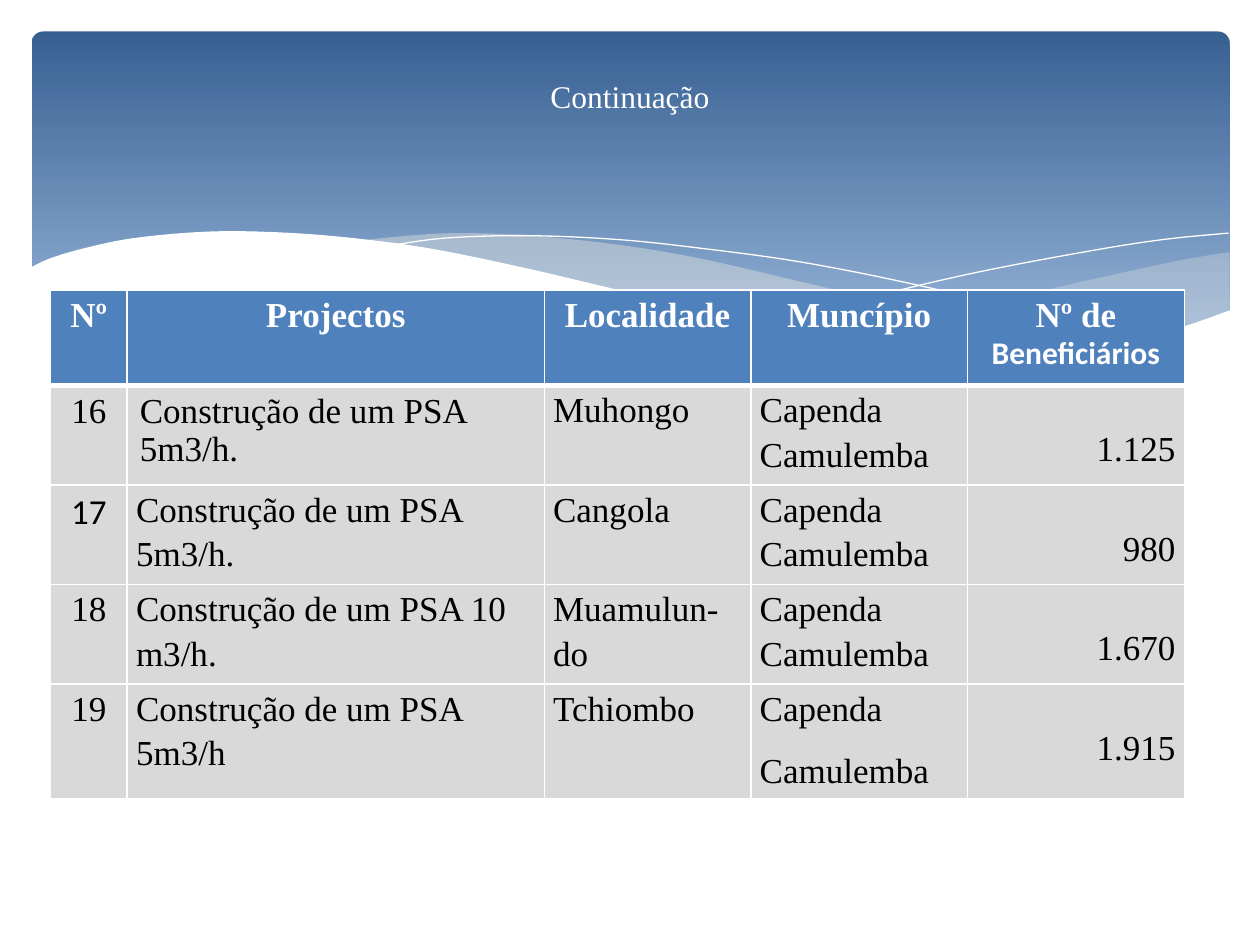
from dataclasses import dataclass
from typing import Optional

from lxml import etree
from pptx import Presentation
from pptx.dml.color import RGBColor
from pptx.enum.shapes import MSO_SHAPE
from pptx.enum.text import MSO_ANCHOR, PP_ALIGN
from pptx.oxml.ns import qn
from pptx.util import Inches, Pt

LEFT, CENTER, RIGHT, JUSTIFY = PP_ALIGN.LEFT, PP_ALIGN.CENTER, PP_ALIGN.RIGHT, PP_ALIGN.JUSTIFY
TOP = MSO_ANCHOR.TOP
ROUNDED = MSO_SHAPE.ROUNDED_RECTANGLE
SERIF, SANS = "Times New Roman", "Calibri"
WHITE, BLACK, BLUE, GREY, CREAM = "FFFFFF", "000000", "4F81BD", "D9D9D9", "EEECE1"
DEFAULT_MARGINS = (0.1, 0.05, 0.1, 0.05)
TIGHT_MARGINS = (0.07, 0, 0.07, 0)
VALUE_MARGINS = (0.07, 0.31, 0.07, 0)  # pushes the number down to the second line
Points = list[tuple[float, float]]


@dataclass
class Run:
    text: str
    font: str = SERIF
    size: float = 20
    color: str = BLACK
    bold: bool = False


@dataclass
class Cell:
    paragraphs: list[list[Run]]
    align: PP_ALIGN
    fill: str = GREY
    margins: tuple[float, ...] = TIGHT_MARGINS
    spacing: Optional[float] = 1.15
    after: float = 0


@dataclass
class Wave:
    edges: list[Points]
    fill: Optional[str] = None
    opacity: int = 100


WAVES = [
    Wave([[(9.76, 2), (9.35, 2.07), (8.61, 2.23), (7.79, 2.42), (7.06, 2.57), (6.61, 2.65)],
          [(6.61, 2.65), (7.05, 2.71), (7.57, 2.76), (8.14, 2.78), (8.63, 2.75),
           (9.13, 2.67), (9.49, 2.57), (9.76, 2.47)]], CREAM, 29),
    Wave([[(8.93, 2.73), (8.07, 2.6), (7.06, 2.4), (6.29, 2.22), (5.55, 2.05), (4.89, 1.94),
           (4.2, 1.87), (3.61, 1.85), (3.13, 1.88), (2.86, 1.91)],
          [(2.86, 1.91), (3.62, 2.03), (4.49, 2.22), (5.3, 2.4), (6.01, 2.55), (6.65, 2.66),
           (7.36, 2.75), (8.07, 2.78), (8.57, 2.77), (8.93, 2.73)]], CREAM, 40),
    Wave([[(3.09, 1.95), (3.53, 1.89), (4.16, 1.87), (4.89, 1.9), (5.56, 1.97), (6.36, 2.08),
           (7.27, 2.26), (8.31, 2.51), (9.07, 2.72)]]),
    Wave([[(6.13, 2.57), (6.95, 2.35), (7.76, 2.16), (8.66, 1.99), (9.24, 1.9), (9.75, 1.85)]]),
    Wave([[(9.77, 2.46), (9.3, 2.62), (8.75, 2.73), (8.09, 2.77), (7.44, 2.74), (6.68, 2.65),
           (5.79, 2.5), (5.03, 2.33), (4.18, 2.13), (3.4, 1.97), (2.71, 1.88), (2.11, 1.84),
           (1.61, 1.84), (1.06, 1.89), (0.67, 1.97), (0.4, 2.05), (0.23, 2.13)],
          [(0.23, 3.29), (9.77, 3.29)]], WHITE),
]

COLUMNS = [0.61, 3.31, 1.64, 1.72, 1.72]
ROWS = [0.76, 0.79, 0.79, 0.79, 0.91]


def rgb(value: str) -> RGBColor:
    return RGBColor.from_string(value)


def smooth(knots: Points, steps: int = 6) -> Points:
    """Sample a Catmull-Rom curve through the knots."""
    if len(knots) < 3:
        return knots
    padded = [knots[0], *knots, knots[-1]]
    points = [knots[0]]
    for a, b, c, d in zip(padded, padded[1:], padded[2:], padded[3:]):
        for i in range(1, steps + 1):
            t = i / steps
            points.append(tuple(
                (2 * q + (r - p) * t + (2 * p - 5 * q + 4 * r - s) * t ** 2
                 + (3 * q - p - 3 * r + s) * t ** 3) / 2
                for p, q, r, s in zip(a, b, c, d)))
    return points


def add_wave(shapes, wave: Wave) -> None:
    points = [(Inches(x), Inches(y)) for edge in wave.edges for x, y in smooth(edge)]
    builder = shapes.build_freeform(*points[0])
    builder.add_line_segments(points[1:], close=wave.fill is not None)
    sp = builder.convert_to_shape()
    sp.shadow.inherit = False
    if wave.fill is None:
        sp.fill.background()
        sp.line.color.rgb = rgb(WHITE)
        sp.line.width = Pt(0)
        return
    sp.line.fill.background()
    sp.fill.solid()
    sp.fill.fore_color.rgb = rgb(wave.fill)
    if wave.opacity < 100:
        color = sp.fill._xPr.find(qn("a:solidFill"))[0]
        etree.SubElement(color, qn("a:alpha"), val=str(wave.opacity * 1000))


def add_banner(shapes) -> None:
    sp = shapes.add_shape(ROUNDED, Inches(0.25), Inches(0.25), Inches(9.51), Inches(2.7))
    sp.adjustments[0] = 0.034
    sp.shadow.inherit = False
    sp.line.fill.background()
    sp.fill.gradient()
    sp.fill.gradient_angle = 270
    for stop, (position, color) in zip(sp.fill.gradient_stops, [(0, "376092"), (0.9, "95B3D7")]):
        stop.position = position
        stop.color.rgb = rgb(color)


def add_run(p, run: Run) -> None:
    r = p.add_run()
    r.text = run.text
    formats = {"name": run.font, "size": Pt(run.size), "bold": run.bold}
    for name, value in formats.items():
        setattr(r.font, name, value)
    r.font.color.rgb = rgb(run.color)


def add_title(shapes, run: Run) -> None:
    tf = shapes.add_textbox(Inches(0.5), Inches(0.56), Inches(9), Inches(0.65)).text_frame
    tf.word_wrap = True
    tf.vertical_anchor = TOP
    p = tf.paragraphs[0]
    p.alignment = CENTER
    add_run(p, run)


def set_borders(cell, widths: dict[str, float]) -> None:
    tc_pr = cell._tc.get_or_add_tcPr()
    for i, (side, width) in enumerate(widths.items()):
        ln = etree.Element(qn(f"a:ln{side}"), w=str(Pt(width)))
        fill = etree.SubElement(ln, qn("a:solidFill"))
        etree.SubElement(fill, qn("a:srgbClr"), val=WHITE)
        tc_pr.insert(i, ln)


def fill_cell(cell, content: Cell) -> None:
    cell.fill.solid()
    cell.fill.fore_color.rgb = rgb(content.fill)
    for side, margin in zip(("left", "top", "right", "bottom"), content.margins):
        setattr(cell, f"margin_{side}", Inches(margin))
    tf = cell.text_frame
    for i, runs in enumerate(content.paragraphs):
        p = tf.add_paragraph() if i else tf.paragraphs[0]
        formats = {"alignment": content.align, "line_spacing": content.spacing,
                   "space_after": Pt(content.after)}
        for name, value in formats.items():
            setattr(p, name, value)
        for run in runs:
            add_run(p, run)


def header(*runs: Run) -> Cell:
    return Cell([list(runs)], CENTER, BLUE, DEFAULT_MARGINS, None)


def heading(text: str, font: str = SERIF, size: float = 20) -> Run:
    return Run(text, font, size, WHITE, True)


def project_row(number: str, project: str, place: str, town: list[str], people: str,
                after: float = 0) -> list[Cell]:
    return [Cell([[Run(number)]], CENTER), Cell([[Run(project)]], LEFT),
            Cell([[Run(place)]], JUSTIFY),
            Cell([[Run(line)] for line in town], JUSTIFY, after=after),
            Cell([[Run(people)]], RIGHT, margins=VALUE_MARGINS)]


def project_table() -> list[list[Cell]]:
    town = ["Capenda Camulemba"]
    rows = [
        [header(heading(t)) for t in ("Nº", "Projectos", "Localidade", "Muncípio")]
        + [header(heading("Nº de "), heading("Beneficiários", SANS, 18))],
        project_row("16", "Construção de um PSA 5m3/h.", "Muhongo", town, "1.125"),
        project_row("17", "Construção de um PSA 5m3/h.", "Cangola", town, "980"),
        project_row("18", "Construção de um PSA 10 m3/h.", "Muamulun-do", town, "1.670", 10),
        project_row("19", "Construção de um PSA 5m3/h", "Tchiombo", town[0].split(), "1.915", 10),
    ]
    for cell in (rows[1][0], rows[1][1], rows[2][0]):
        cell.margins, cell.spacing = DEFAULT_MARGINS, None
    rows[2][0].paragraphs[0][0].font = SANS
    return rows


def add_project_table(shapes) -> None:
    table = shapes.add_table(len(ROWS), len(COLUMNS), Inches(0.4), Inches(2.3),
                             Inches(sum(COLUMNS)), Inches(sum(ROWS))).table
    table.horz_banding = False
    for column, width in zip(table.columns, COLUMNS):
        column.width = Inches(width)
    for i, (height, row) in enumerate(zip(ROWS, project_table())):
        table.rows[i].height = Inches(height)
        for j, content in enumerate(row):
            fill_cell(table.cell(i, j), content)
            set_borders(table.cell(i, j), {"L": 1, "R": 1, "T": 3 if i == 1 else 1,
                                           "B": 3 if i == 0 else 1})


def main() -> None:
    prs = Presentation()
    prs.slide_width, prs.slide_height = Inches(10), Inches(7.5)
    shapes = prs.slides.add_slide(prs.slide_layouts[6]).shapes
    add_banner(shapes)
    for wave in WAVES:
        add_wave(shapes, wave)
    add_project_table(shapes)
    add_title(shapes, Run("Continuação", size=18, color=WHITE))
    prs.save("out.pptx")


if __name__ == "__main__":
    main()
